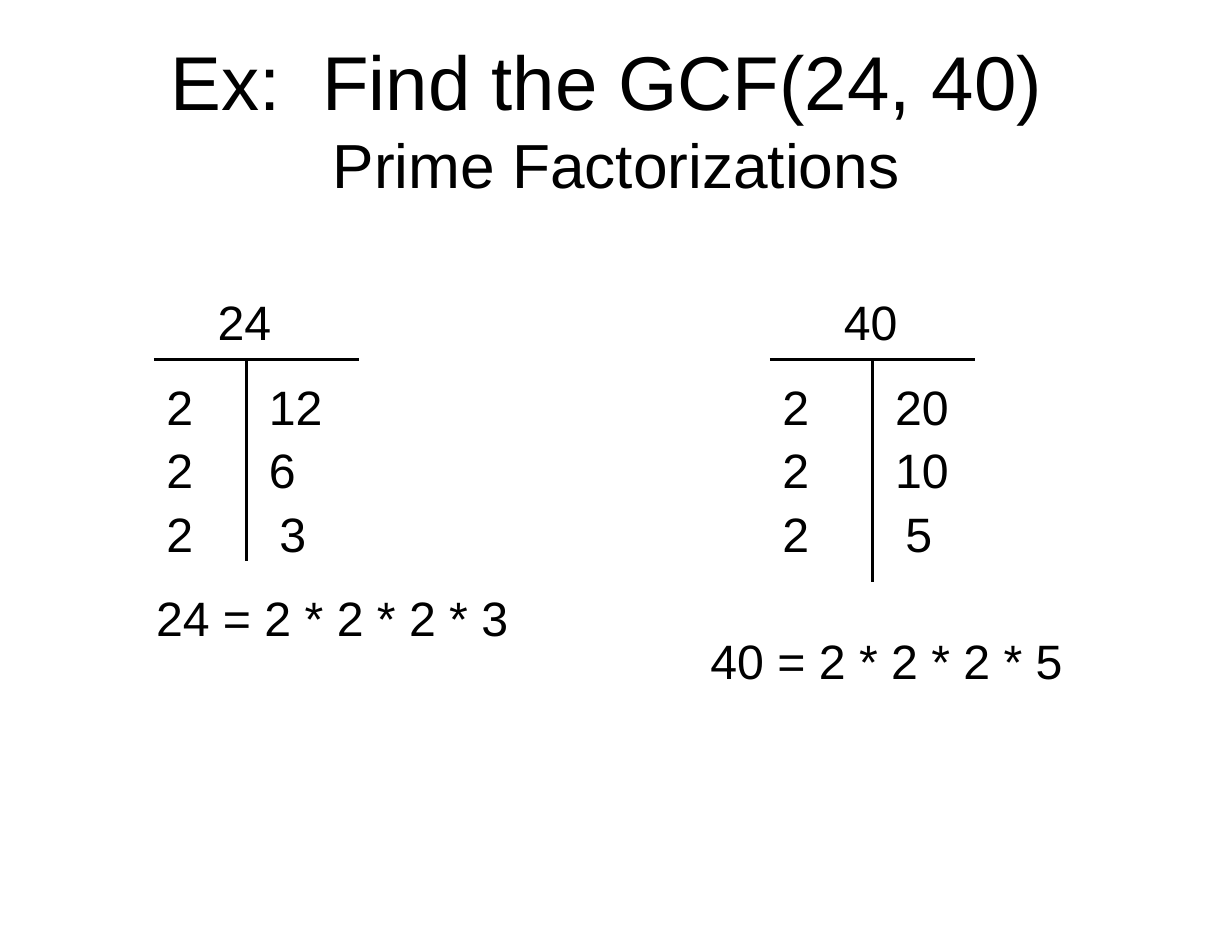
from dataclasses import dataclass

from lxml.etree import SubElement
from pptx import Presentation
from pptx.dml.color import RGBColor as Rgb
from pptx.enum.shapes import MSO_CONNECTOR as Conn
from pptx.enum.text import MSO_ANCHOR as Anchor, PP_ALIGN as Align
from pptx.oxml.ns import qn
from pptx.util import Inches, Pt


@dataclass(frozen=True)
class Theme:
    font: str = "Arial"
    ink: Rgb = Rgb(0, 0, 0)
    paper: Rgb = Rgb(255, 255, 255)
    title: int = 49
    gap: int = 45
    sub: int = 40
    body: int = 31
    rule: int = 2


LOOK = Theme()
WIDE, HIGH = Inches(11), Inches(8.5)
COL, ROW = WIDE / 12, HIGH / 90  # grid of 12 columns and 90 rows
TALL = 6.8  # rows in one line of text
STEP = 6  # rows from one division to the next


def spot(x, y):
    return round(x * COL), round(y * ROW)


def add_run(para, text, size):
    run = para.add_run()
    run.text = text
    run.font.name, run.font.size = LOOK.font, Pt(size)
    run.font.color.rgb = LOOK.ink


def add_box(slide, x, y, w, h=TALL):
    frame = slide.shapes.add_textbox(*spot(x, y), *spot(w, h)).text_frame
    frame.word_wrap = True
    frame.margin_left = frame.margin_right = Inches(0.11)
    frame.margin_top = frame.margin_bottom = Inches(0.06)
    return frame


def add_text(slide, text, x, y, w):
    add_run(add_box(slide, x, y, w).paragraphs[0], text, LOOK.body)


def add_rule(slide, start, end):
    line = slide.shapes.add_connector(Conn.STRAIGHT, *spot(*start), *spot(*end))
    line.line.color.rgb = LOOK.ink
    line.line.width = Pt(LOOK.rule)
    SubElement(line._element.spPr, qn("a:effectLst"))


def add_title(slide, x, y, w, h):
    frame = add_box(slide, x, y, w, h)
    frame.vertical_anchor = Anchor.MIDDLE
    para = frame.paragraphs[0]
    para.alignment = Align.CENTER
    add_run(para, "Ex:  Find the GCF(24, 40)", LOOK.title)
    add_run(para, " ", LOOK.gap)
    para.add_line_break()
    add_run(para, "Prime Factorizations", LOOK.sub)


def add_tree(slide, x, y, w, h, stem, head, steps):
    """Division ladder: bar at 7 rows below the top, stem in columns from x."""
    mid, bar = x + stem, y + 7
    # Bar and stem
    add_rule(slide, (x, bar), (x + w, bar))
    add_rule(slide, (mid, bar), (mid, y + h))
    # Number to factor
    add_text(slide, head, mid - 0.4, y, 0.9)
    # Primes on the left, quotients on the right; the last one is indented
    for i, (prime, left, rest, right) in enumerate(steps):
        top = bar + 1 + i * STEP
        inset = 0.2 if i == len(steps) - 1 else 0.1
        add_text(slide, prime, x, top, left)
        add_text(slide, rest, mid + inset, top, right)


def main():
    deck = Presentation()
    deck.slide_width, deck.slide_height = WIDE, HIGH
    slide = deck.slides.add_slide(deck.slide_layouts[6])
    fill = slide.background.fill
    fill.solid()
    fill.fore_color.rgb = LOOK.paper

    add_title(slide, 0.6, 3.6, 10.8, 15)

    # Ladders: prime, its width, quotient, its width
    add_tree(slide, 1.5, 27, 2, 26, 0.9, "24",
             [("2", 0.9, "12", 0.9), ("2", 0.6, "6", 0.9), ("2", 0.6, "3", 0.6)])
    add_tree(slide, 7.5, 27, 2, 28, 1, "40",
             [("2", 0.9, "20", 0.9), ("2", 0.9, "10", 0.9), ("2", 0.9, "5", 0.9)])

    # Products
    add_text(slide, "24 = 2 * 2 * 2 * 3", 1.4, 55, 4.2)
    add_text(slide, "40 = 2 * 2 * 2 * 5", 6.8, 59, 4)

    deck.save("out.pptx")


if __name__ == "__main__":
    main()
